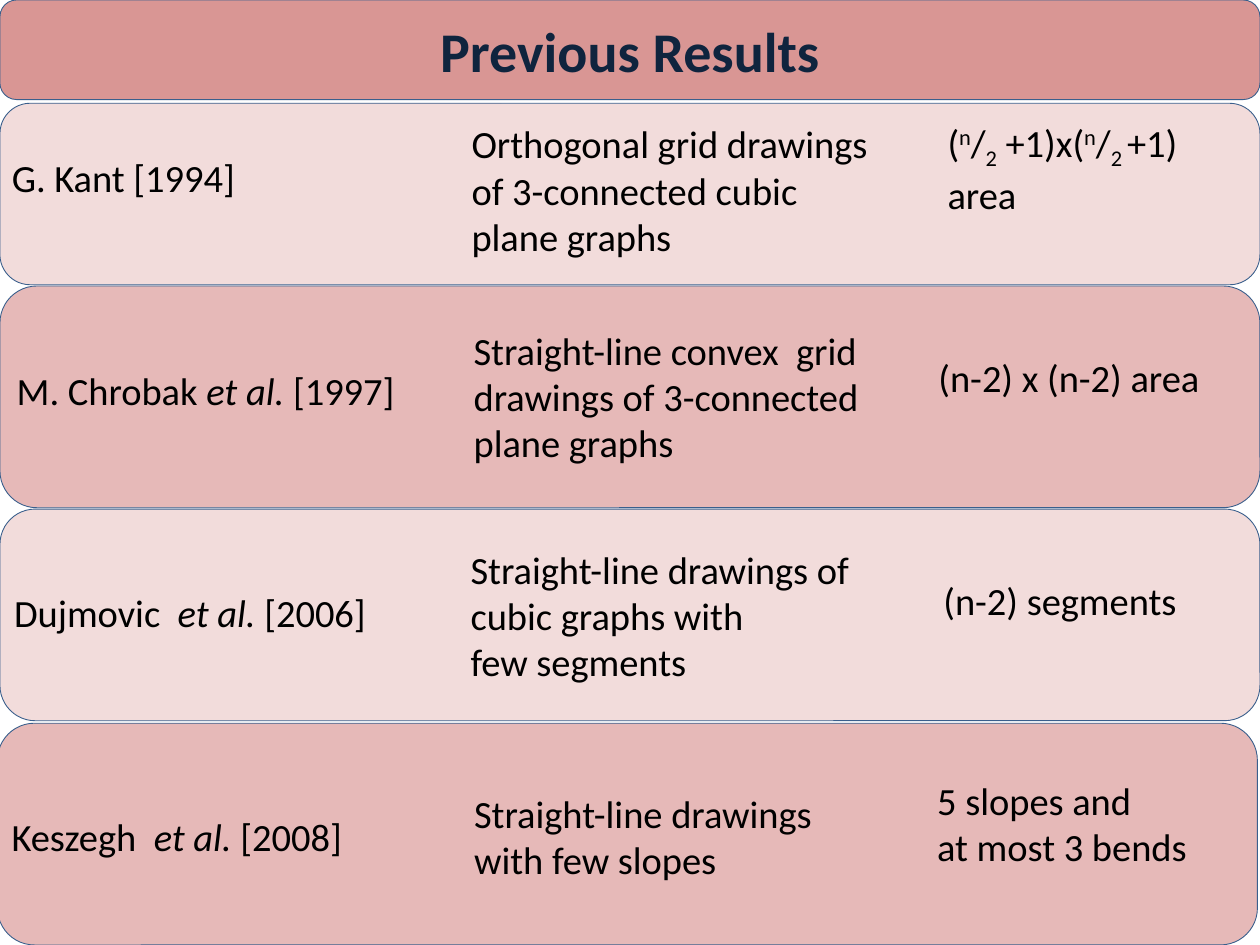
from pptx import Presentation
from pptx.dml.color import RGBColor
from pptx.enum.shapes import MSO_SHAPE as Preset
from pptx.enum.text import MSO_ANCHOR as Anchor, PP_ALIGN as Align
from pptx.util import Emu, Pt

EMU_PER_PX = 9144
HEADER_ROSE = RGBColor(0xD9, 0x96, 0x94)
DARK_ROSE = RGBColor(0xE6, 0xB9, 0xB8)
PALE_ROSE = RGBColor(0xF2, 0xDC, 0xDB)
OUTLINE = RGBColor(0x3A, 0x5F, 0x8C)
NAVY = RGBColor(0x0F, 0x24, 0x3E)
BLACK = RGBColor(0x00, 0x00, 0x00)

PLAIN, ITALIC, SUPER, SUB = "plain", "italic", "super", "sub"
BASELINES = {SUPER: "30000", SUB: "-25000"}
HALF_N = [("n", SUPER), ("/", PLAIN)]

RESULTS = [
    (PALE_ROSE, (0, 82, 1000, 144), [
        ((-5, 94, 422, 93), [["G. Kant [1994]"]]),
        ((358, 85, 348, 131),
         [["Orthogonal grid drawings of 3-connected cubic plane graphs"]]),
        ((738, 90, 246, 87),
         [["(", *HALF_N, ("2", SUB), " +1)x(", *HALF_N, ("2 ", SUB), "+1) area"]]),
    ]),
    (DARK_ROSE, (0, 227, 1000, 176), [
        ((-3, 244, 422, 131), [["M. Chrobak", (" et al.", ITALIC), " [1997]"]]),
        ((358, 232, 381, 165),
         [["Straight-line convex  grid drawings of 3-connected plane graphs"]]),
        ((729, 238, 246, 123), [["(n-2) x (n-2) area"]]),
    ]),
    (PALE_ROSE, (0, 404, 1000, 168), [
        ((-5, 421, 422, 130), [["Dujmovic ", (" et al. ", ITALIC), "[2006]"]]),
        ((356, 409, 381, 158),
         [["Straight-line drawings of"], ["cubic graphs with"], ["few segments"]]),
        ((733, 415, 246, 122), [["(n-2) segments"]]),
    ]),
    (DARK_ROSE, (-2, 574, 1000, 176), [
        ((-7, 598, 422, 131), [["Keszegh ", (" et al. ", ITALIC), "[2008]"]]),
        ((358, 577, 381, 173), [["Straight-line drawings"], ["with few slopes"]]),
        ((728, 592, 246, 123), [["5 slopes and"], ["at most 3 bends"]]),
    ]),
]


class ResultsSlide:
    """Draws rounded bands and their text on one slide in a shared style."""

    font_name = "Calibri"
    title_size = Pt(32)
    body_size = Pt(22)

    def __init__(self, deck):
        self.slide = deck.slides.add_slide(deck.slide_layouts[6])

    def rounded(self, shapes, box):
        panel = shapes.add_shape(
            Preset.ROUNDED_RECTANGLE, *(Emu(px * EMU_PER_PX) for px in box))
        panel.shadow.inherit = False
        panel.text_frame.word_wrap = True
        panel.text_frame.vertical_anchor = Anchor.MIDDLE
        return panel

    def band(self, shapes, box, color):
        band = self.rounded(shapes, box)
        band.fill.solid()
        band.fill.fore_color.rgb = color
        band.line.color.rgb = OUTLINE
        band.line.width = Pt(0.5)
        return band

    def style(self, run, size, color):
        run.font.name = self.font_name
        run.font.size = size
        run.font.color.rgb = color

    def title(self, box, wording):
        heading = self.band(self.slide.shapes, box, HEADER_ROSE).text_frame
        heading.text = wording
        line = heading.paragraphs[0]
        line.alignment = Align.CENTER
        self.style(line.runs[0], self.title_size, NAVY)
        line.runs[0].font.bold = True

    def cell(self, shapes, box, lines):
        cell = self.rounded(shapes, box)
        cell.fill.background()
        cell.line.fill.background()
        frame = cell.text_frame
        for index, pieces in enumerate(lines):
            line = frame.add_paragraph() if index else frame.paragraphs[0]
            line.alignment = Align.LEFT
            for piece in pieces:
                wording, mark = (piece, PLAIN) if isinstance(piece, str) else piece
                run = line.add_run()
                run.text = wording
                self.style(run, self.body_size, BLACK)
                if mark == ITALIC:
                    run.font.italic = True
                elif mark in BASELINES:
                    run.font._element.set("baseline", BASELINES[mark])

    def result(self, color, box, cells):
        members = self.slide.shapes.add_group_shape().shapes
        self.band(members, box, color)
        for cell_box, lines in cells:
            self.cell(members, cell_box, lines)


def main():
    deck = Presentation()
    deck.slide_width = Emu(1000 * EMU_PER_PX)
    deck.slide_height = Emu(750 * EMU_PER_PX)
    page = ResultsSlide(deck)
    page.title((0, 0, 1000, 79), "Previous Results")
    for color, box, cells in RESULTS:
        page.result(color, box, cells)
    deck.save("out.pptx")


if __name__ == "__main__":
    main()
